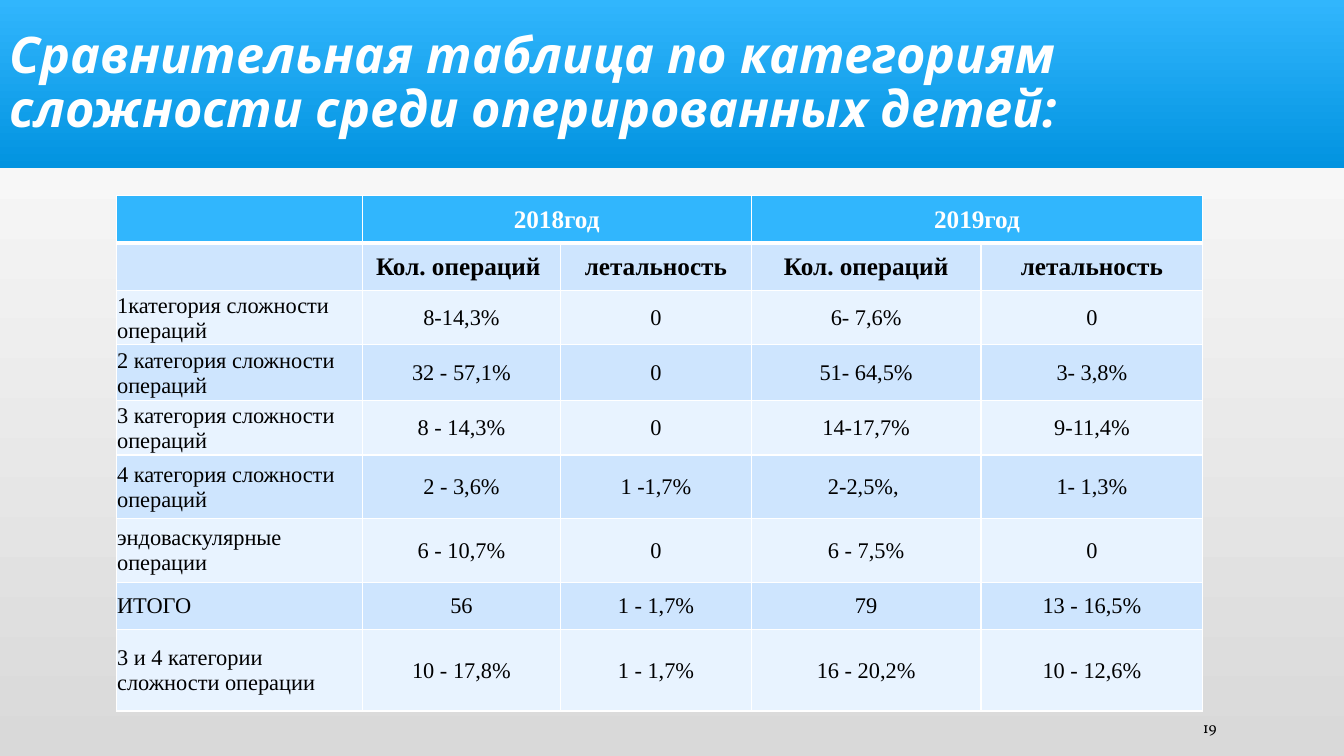
from dataclasses import dataclass

from lxml.etree import SubElement
from pptx import Presentation
from pptx.dml.color import RGBColor
from pptx.enum.shapes import MSO_SHAPE
from pptx.enum.text import MSO_ANCHOR, PP_ALIGN
from pptx.oxml.ns import qn
from pptx.util import Pt


@dataclass(frozen=True)
class Theme:
    # Colours
    white: str = "FFFFFF"
    black: str = "000000"
    grey: str = "D9D9D9"
    blue: str = "31B6FD"
    deep_blue: str = "0293E0"
    band_dark: str = "CEE5FE"
    band_light: str = "E8F3FF"
    # Fonts and type sizes
    title_font: str = "Open Sans"
    table_font: str = "Times New Roman"
    number_font: str = "Vollkorn"
    title_size: float = 36
    head_size: float = 18
    body_size: float = 16
    number_size: float = 11


class SlideBuilder:
    def __init__(self, prs, theme):
        self.theme = theme
        self.s = prs.slides.add_slide(prs.slide_layouts[6])

    def gradient(self, fill, colours, angle):
        fill.gradient()
        fill.gradient_angle = angle
        for stop, colour in zip(fill.gradient_stops, colours):
            stop.color.rgb = RGBColor.from_string(colour)

    def banner(self, x, y, w, h, colours):
        sp = self.s.shapes.add_shape(MSO_SHAPE.RECTANGLE, Pt(x), Pt(y), Pt(w), Pt(h))
        sp.shadow.inherit = False
        sp.line.fill.background()
        self.gradient(sp.fill, colours, 270)

    def run(self, p, text, font, size, colour, bold=False, italic=False):
        r = p.add_run()
        r.text = text
        r.font.name, r.font.size = font, Pt(size)
        r.font.bold, r.font.italic = bold, italic
        r.font.color.rgb = RGBColor.from_string(colour)

    def text(self, x, y, w, h, text, align=PP_ALIGN.LEFT, spacing=1.0, **style):
        tf = self.s.shapes.add_textbox(Pt(x), Pt(y), Pt(w), Pt(h)).text_frame
        tf.word_wrap = True
        tf.vertical_anchor = MSO_ANCHOR.MIDDLE
        p = tf.paragraphs[0]
        p.alignment, p.line_spacing = align, spacing
        self.run(p, text, **style)

    def borders(self, cell, widths):
        tc_pr = cell._tc.get_or_add_tcPr()
        for i, (side, width) in enumerate(zip("LRTB", widths)):
            ln = SubElement(tc_pr, qn(f"a:ln{side}"), w=str(Pt(width)))
            fill = SubElement(ln, qn("a:solidFill"))
            SubElement(fill, qn("a:srgbClr"), val=self.theme.white)
            tc_pr.insert(i, ln)

    def cell(self, cell, text, row, col):
        t = self.theme
        band = t.band_dark if row % 2 else t.band_light
        cell.fill.solid()
        cell.fill.fore_color.rgb = RGBColor.from_string(t.blue if row == 0 else band)
        self.borders(cell, (1, 1, 3 if row == 1 else 1, 3 if row == 0 else 1))
        if not text:
            return
        cell.vertical_anchor = MSO_ANCHOR.MIDDLE
        cell.margin_left = cell.margin_right = cell.margin_top = Pt(0.7)
        cell.margin_bottom = 0
        p = cell.text_frame.paragraphs[0]
        p.alignment = PP_ALIGN.CENTER if col else PP_ALIGN.LEFT
        head = row < 2
        self.run(p, text, t.table_font, t.head_size if head else t.body_size,
                 t.white if row == 0 else t.black, bold=head)

    def table(self, x, y, widths, heights, rows, merges):
        table = self.s.shapes.add_table(len(rows), len(widths), Pt(x), Pt(y),
                                        Pt(sum(widths)), Pt(sum(heights))).table
        for column, width in zip(table.columns, widths):
            column.width = Pt(width)
        for row, height in zip(table.rows, heights):
            row.height = Pt(height)
        for i, values in enumerate(rows):
            for j, value in enumerate(values):
                self.cell(table.cell(i, j), value, i, j)
        for row, first, last in merges:
            table.cell(row, first).merge(table.cell(row, last))


COLUMN_WIDTHS = [175.7, 141.8, 136.1, 164.2, 158.4]
ROW_HEIGHTS = [33.8, 33.8, 33.8, 39.6, 33.8, 45.4, 45.4, 33.8, 58.3]
ROWS = [
    ["", "2018год", "", "2019год", ""],
    ["", "Кол. операций ", "летальность", "Кол. операций", "летальность"],
    ["1категория сложности операций", "8-14,3%", "0", "6- 7,6%", "0"],
    ["2 категория сложности операций", "32 - 57,1%", "0", "51- 64,5%", "3- 3,8%"],
    ["3 категория сложности операций", "8 - 14,3%", "0", "14-17,7%", "9-11,4%"],
    ["4 категория сложности операций", "2 - 3,6%", "1 -1,7%", "2-2,5%, ", "1- 1,3%"],
    ["эндоваскулярные операции", "6 - 10,7%", "0", "6 - 7,5%", "0"],
    ["ИТОГО", "56", "1 - 1,7%", "79", "13 - 16,5%"],
    ["3 и 4 категории сложности операции", "10 - 17,8%", "1 - 1,7%", "16 - 20,2%",
     "10 - 12,6%"],
]


def main():
    prs = Presentation()
    prs.slide_width, prs.slide_height = Pt(960), Pt(540)
    t = Theme()
    b = SlideBuilder(prs, t)

    # Background and title banner
    b.gradient(b.s.background.fill, (t.grey, t.white), 90)
    b.banner(0, 0, 960, 120, (t.blue, t.deep_blue))
    b.text(0, 8, 960, 104, "Сравнительная таблица по категориям сложности среди оперированных детей:",
           spacing=0.9, font=t.title_font, size=t.title_size, colour=t.white,
           bold=True, italic=True)

    # Comparison table, each year spanning two columns
    b.table(83, 139.7, COLUMN_WIDTHS, ROW_HEIGHTS, ROW_DATA := ROWS, [(0, 1, 2), (0, 3, 4)])

    # Slide number
    b.text(810, 510.5, 66.2, 18.7, "19", align=PP_ALIGN.RIGHT,
           font=t.number_font, size=t.number_size, colour=t.black)

    prs.save("out.pptx")


if __name__ == "__main__":
    main()
